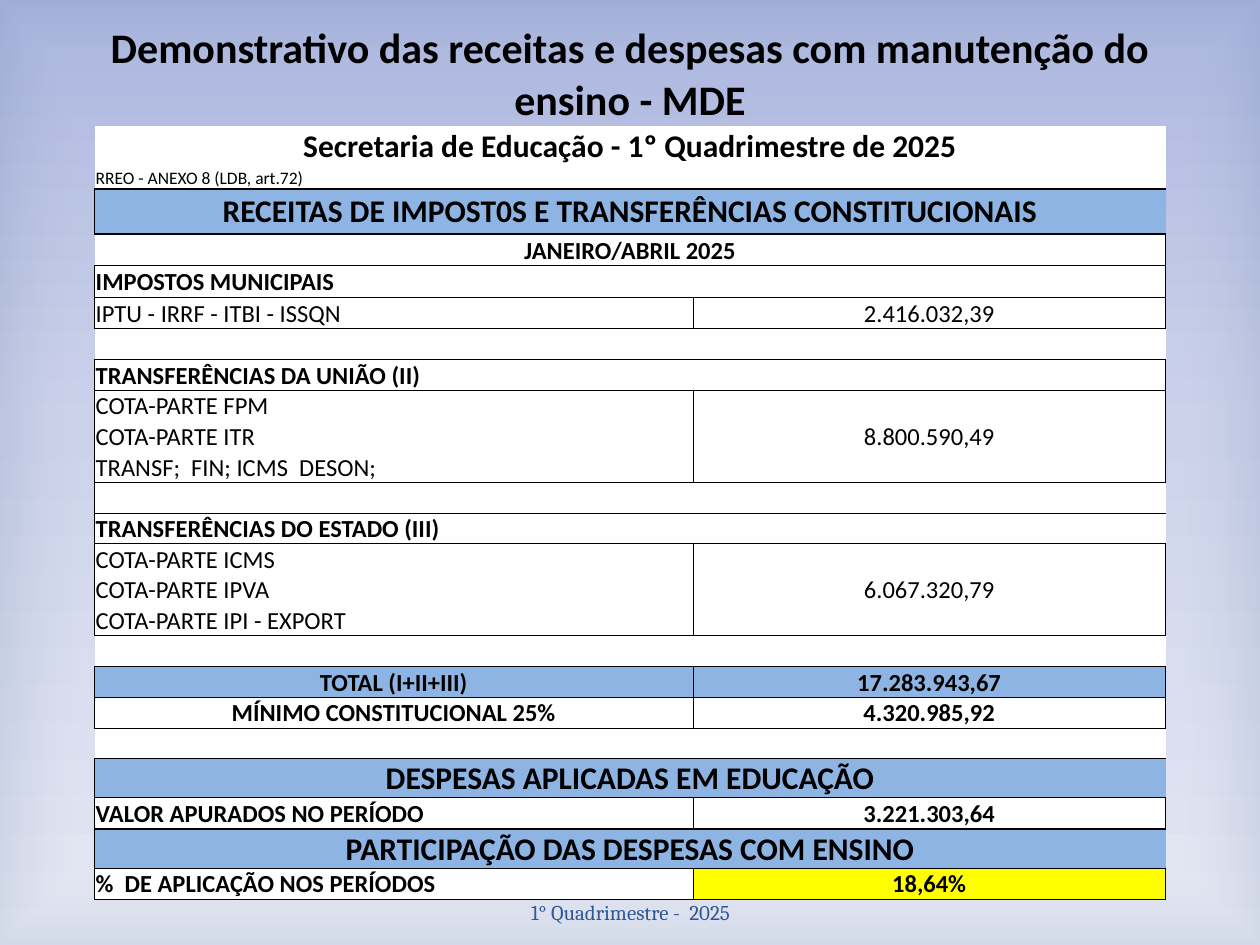
from dataclasses import dataclass

from lxml.etree import SubElement
from pptx import Presentation
from pptx.dml.color import RGBColor
from pptx.enum.shapes import MSO_SHAPE as Shape
from pptx.enum.text import MSO_ANCHOR as Anchor, PP_ALIGN as Align
from pptx.oxml.ns import qn
from pptx.util import Inches, Pt

COLORS = {
    "text": "000000", "paper": "FFFFFF", "band": "8DB4E2", "result": "FFFF00",
    "footer": "2F5897", "sky": "A2AEDC", "haze": "C6CDE8", "mist": "E3E6F3",
    "vignette": "9BADC4",
}
BORDER_TAGS = {"l": "a:lnL", "r": "a:lnR", "t": "a:lnT", "b": "a:lnB"}
PLAIN_STYLE = "{2D5ABB26-0587-4C30-8999-92F81FD0307C}"


@dataclass
class Entry:
    """Text and look of one cell; capital letters in borders mean 1 pt lines."""
    text: str = ""
    size: int = 14
    bold: bool = False
    align: Align = Align.LEFT
    anchor: Anchor = Anchor.MIDDLE
    fill: str | None = "paper"
    borders: str = "ltrb"
    rows: int = 1
    columns: int = 1


def heading(text, size=18, fill="band", borders="LTB", anchor=Anchor.MIDDLE):
    """Return a bold centred entry across both columns."""
    return [Entry(text, size, True, Align.CENTER, anchor, fill, borders, columns=2)]


def section(text, borders="ltrb", anchor=Anchor.BOTTOM):
    """Return a bold left-aligned entry across both columns."""
    return [Entry(text, bold=True, anchor=anchor, borders=borders, columns=2)]


def amount(text, bold=False, fill="paper", borders="ltrb", rows=1):
    """Return a centred value."""
    return Entry(text, bold=bold, align=Align.CENTER, fill=fill, borders=borders, rows=rows)


def quotas(names, total):
    """Return stacked quota rows that share one total."""
    last = len(names) - 1
    rows = []
    for index, name in enumerate(names):
        edges = "lr" + ("t" if index == 0 else "") + ("b" if index == last else "")
        rows.append((0.24, [Entry(name, anchor=Anchor.BOTTOM, borders=edges)]))
    rows[0][1].append(amount(total, rows=len(names)))
    return rows


def gap(borders, merged=False):
    """Return an empty row."""
    if merged:
        return 0.24, [Entry(borders=borders, columns=2)]
    return 0.24, [Entry(borders=borders), Entry(borders=borders)]


def statement_rows():
    """Return the height and entries of every statement row."""
    return [
        (0.82, heading("Demonstrativo das receitas e despesas com manutenção do ensino - MDE",
                       24, None, "")),
        (0.32, heading("Secretaria de Educação - 1º Quadrimestre de 2025", 18, "paper", "")),
        (0.18, [Entry("RREO - ANEXO 8 (LDB, art.72)", 10, borders="B"),
                Entry(size=10, borders="B")]),
        (0.36, heading("RECEITAS DE IMPOST0S E TRANSFERÊNCIAS CONSTITUCIONAIS")),
        (0.25, heading("JANEIRO/ABRIL 2025", 14, "paper", "Trb")),
        (0.25, section("IMPOSTOS MUNICIPAIS")),
        (0.25, [Entry("IPTU - IRRF - ITBI - ISSQN", anchor=Anchor.BOTTOM),
                amount("2.416.032,39")]),
        gap("tb", merged=True),
        (0.24, section("TRANSFERÊNCIAS DA UNIÃO (II)", anchor=Anchor.MIDDLE)),
        *quotas(["COTA-PARTE FPM", "COTA-PARTE ITR", "TRANSF;  FIN; ICMS  DESON;"],
                "8.800.590,49"),
        gap("ltb", merged=True),
        (0.24, section("TRANSFERÊNCIAS DO ESTADO (III)", "ltb")),
        *quotas(["COTA-PARTE ICMS", "COTA-PARTE IPVA", "COTA-PARTE IPI - EXPORT"],
                "6.067.320,79"),
        gap("tb"),
        (0.24, [amount("TOTAL (I+II+III)", True, "band"),
                amount("17.283.943,67", True, "band")]),
        (0.24, [amount("MÍNIMO CONSTITUCIONAL 25%", True),
                amount("4.320.985,92", True)]),
        gap("tB"),
        (0.31, heading("DESPESAS APLICADAS EM EDUCAÇÃO", borders="LTb")),
        (0.25, [Entry("VALOR APURADOS NO PERÍODO", bold=True, borders="ltrB"),
                amount("3.221.303,64", True, borders="ltrB")]),
        (0.31, heading("PARTICIPAÇÃO DAS DESPESAS COM ENSINO", anchor=Anchor.BOTTOM)),
        (0.24, [Entry("%  DE APLICAÇÃO NOS PERÍODOS", bold=True, borders="lTrb"),
                amount("18,64%", True, "result")]),
    ]


def rgb(name):
    """Return a named colour."""
    return RGBColor.from_string(COLORS[name])


def write(paragraph, text, size, font, color, bold=False):
    """Add one formatted run."""
    run = paragraph.add_run()
    run.text = text
    run.font.size, run.font.name, run.font.bold = Pt(size), font, bold
    run.font.color.rgb = rgb(color)


def set_stops(gradient, stops, radial=False):
    """Replace gradient contents with (position, colour, opacity) stops."""
    for child in list(gradient):
        gradient.remove(child)
    stop_list = SubElement(gradient, qn("a:gsLst"))
    for position, color, opacity in stops:
        stop = SubElement(stop_list, qn("a:gs"), pos=str(position * 1000))
        shade = SubElement(stop, qn("a:srgbClr"), val=COLORS[color])
        if opacity < 100:
            SubElement(shade, qn("a:alpha"), val=str(opacity * 1000))
    if radial:
        focus = SubElement(gradient, qn("a:path"), {"path": "rect"})
        SubElement(focus, qn("a:fillToRect"), dict.fromkeys("ltrb", "50000"))
    else:
        SubElement(gradient, qn("a:lin"), ang="5400000", scaled="0")


def add_backdrop(slide, width, height):
    """Paint the background and its soft vignette."""
    slide.background.fill.gradient()
    set_stops(slide.element.find(".//" + qn("a:gradFill")),
              [(0, "sky", 100), (45, "haze", 100), (100, "mist", 100)])
    vignette = slide.shapes.add_shape(Shape.RECTANGLE, 0, 0, width, height)
    vignette.shadow.inherit = False
    vignette.line.fill.background()
    vignette.fill.gradient()
    set_stops(vignette.element.find(".//" + qn("a:gradFill")),
              [(83, "paper", 11), (100, "vignette", 23)], radial=True)


def draw_borders(cell, borders):
    """Draw the chosen cell edges ahead of the cell fill."""
    properties = cell._tc.get_or_add_tcPr()
    widths = {edge.lower(): Pt(1 if edge.isupper() else 0.5) for edge in borders}
    for index, (edge, tag) in enumerate(BORDER_TAGS.items()):
        line = SubElement(properties, qn(tag), w=str(widths.get(edge, 0)))
        if edge in widths:
            solid = SubElement(line, qn("a:solidFill"))
            SubElement(solid, qn("a:srgbClr"), val=COLORS["text"])
        else:
            SubElement(line, qn("a:noFill"))
        properties.insert(index, line)


def fill_cell(cell, entry):
    """Apply an entry to a table cell."""
    cell.margin_left = cell.margin_top = cell.margin_right = Inches(0.01)
    cell.margin_bottom = 0
    cell.vertical_anchor = entry.anchor
    if entry.fill:
        cell.fill.solid()
        cell.fill.fore_color.rgb = rgb(entry.fill)
    else:
        cell.fill.background()
    draw_borders(cell, entry.borders)
    paragraph = cell.text_frame.paragraphs[0]
    paragraph.alignment = entry.align
    if entry.text:
        write(paragraph, entry.text, entry.size, "Calibri", "text", entry.bold)
    else:
        SubElement(paragraph._p, qn("a:endParaRPr"), sz=str(entry.size * 100))


def add_statement(slide, rows):
    """Add the revenue and expense table."""
    height = Inches(sum(row_height for row_height, _ in rows))
    table = slide.shapes.add_table(len(rows), 2, Inches(0.75), Inches(0.18),
                                   Inches(8.5), height).table
    table.first_row = table.horz_banding = False
    table._tbl.tblPr.find(qn("a:tableStyleId")).text = PLAIN_STYLE
    for column, width in zip(table.columns, (4.75, 3.75)):
        column.width = Inches(width)
    for row, (row_height, entries) in enumerate(rows):
        table.rows[row].height = Inches(row_height)
        for column, entry in enumerate(entries):
            cell = table.cell(row, column)
            fill_cell(cell, entry)
            if entry.rows * entry.columns > 1:
                cell.merge(table.cell(row + entry.rows - 1, column + entry.columns - 1))


def add_footer(slide):
    """Add the period below the table."""
    frame = slide.shapes.add_textbox(Inches(3.42), Inches(7.04),
                                     Inches(3.17), Inches(0.4)).text_frame
    frame.word_wrap = True
    frame.vertical_anchor = Anchor.MIDDLE
    frame.paragraphs[0].alignment = Align.CENTER
    write(frame.paragraphs[0], "1° Quadrimestre -  2025", 12, "Cambria", "footer")


def main():
    """Build and save the slide."""
    deck = Presentation()
    deck.slide_width, deck.slide_height = Inches(10), Inches(7.5)
    slide = deck.slides.add_slide(deck.slide_layouts[6])
    add_backdrop(slide, deck.slide_width, deck.slide_height)
    add_footer(slide)
    add_statement(slide, statement_rows())
    deck.save("out.pptx")


if __name__ == "__main__":
    main()
